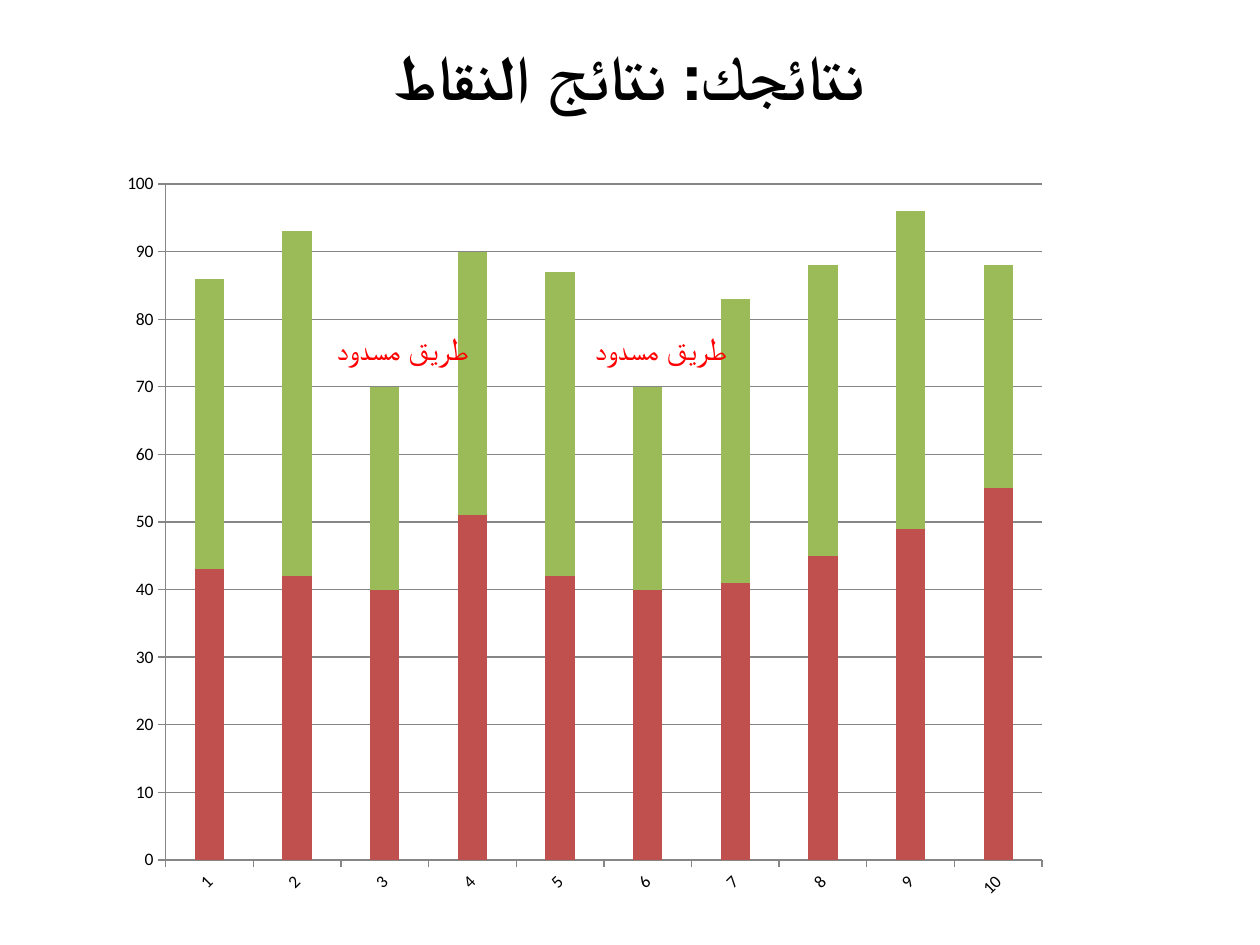
import pptx
import pptx.chart.data
import pptx.dml.color
import pptx.enum.chart
import pptx.enum.text
import pptx.oxml
import pptx.oxml.ns
import pptx.util

Inches = pptx.util.Inches
Pt = pptx.util.Pt


def set_color(color_format, hex_color):
    color_format.rgb = pptx.dml.color.RGBColor.from_string(hex_color)


def write_arabic(shape, text, alignment, font_format, hex_color):
    paragraph = shape.text_frame.paragraphs[0]
    paragraph.alignment = alignment
    paragraph._p.get_or_add_pPr().set("rtl", "1")
    run = paragraph.add_run()
    run.text = text
    for name, value in font_format.items():
        setattr(run.font, name, value)
    set_color(run.font.color, hex_color)


presentation = pptx.Presentation()
presentation.slide_width = Inches(10)
presentation.slide_height = Inches(7.5)
slide = presentation.slides.add_slide(presentation.slide_layouts[5])

title = slide.shapes.title
title_place = {"left": 0, "top": -0.03, "width": 10, "height": 1.25}
for name, value in title_place.items():
    setattr(title, name, Inches(value))
title.text_frame.vertical_anchor = pptx.enum.text.MSO_ANCHOR.MIDDLE
write_arabic(
    title,
    "نتائجك: نتائج النقاط",
    pptx.enum.text.PP_ALIGN.CENTER,
    {"size": Pt(36), "name": "Calibri", "bold": True},
    "000000",
)

chart_data = pptx.chart.data.CategoryChartData()
chart_data.categories = [str(number) for number in range(1, 11)]
chart_data.add_series("Series 1", [43, 42, 40, 51, 42, 40, 41, 45, 49, 55])
chart_data.add_series("Series 2", [43, 51, 30, 39, 45, 30, 42, 43, 47, 33])
chart = slide.shapes.add_chart(
    pptx.enum.chart.XL_CHART_TYPE.COLUMN_STACKED,
    Inches(0.2), Inches(0.92), Inches(10.23), Inches(6.44),
    chart_data,
).chart
chart.has_legend = False
chart.has_title = False
chart.font.size = Pt(10)
chart.font.name = "Calibri"
set_color(chart.font.color, "000000")

plot = chart.plots[0]
plot_format = {"gap_width": 199, "overlap": 100, "vary_by_categories": False}
for name, value in plot_format.items():
    setattr(plot, name, value)
for series, hex_color in zip(plot.series, ["C0504D", "9BBB59"]):
    series.format.fill.solid()
    set_color(series.format.fill.fore_color, hex_color)

value_axis = chart.value_axis
value_format = {
    "minimum_scale": 0,
    "maximum_scale": 100,
    "major_unit": 10,
    "has_major_gridlines": True,
}
for name, value in value_format.items():
    setattr(value_axis, name, value)
for axis in (chart.category_axis, value_axis):
    axis.major_tick_mark = pptx.enum.chart.XL_TICK_MARK.OUTSIDE
    axis.tick_labels.font.size = Pt(10)
    axis.tick_labels.font.name = "Calibri"
    set_color(axis.tick_labels.font.color, "000000")
for line in (
    chart.category_axis.format.line,
    value_axis.format.line,
    value_axis.major_gridlines.format.line,
):
    line.width = Pt(0.75)
    set_color(line.color, "868686")

qn = pptx.oxml.ns.qn
label_body = chart.category_axis._element.find(qn("c:txPr")).find(qn("a:bodyPr"))
label_body.set("rot", "-2700000")
label_body.set("vert", "horz")

plot_area = chart._chartSpace.chart.plotArea
for old_layout in plot_area.findall(qn("c:layout")):
    plot_area.remove(old_layout)
layout_values = {
    "layoutTarget": "inner",
    "xMode": "edge",
    "yMode": "edge",
    "x": 0.109,
    "y": 0.084,
    "w": 0.68,
    "h": 0.833,
}
layout_items = "".join(f'<c:{name} val="{value}"/>' for name, value in layout_values.items())
plot_area.insert(0, pptx.oxml.parse_xml(
    f'<c:layout {pptx.oxml.ns.nsdecls("c")}><c:manualLayout>{layout_items}</c:manualLayout></c:layout>'
))

for left in (2.56, 4.61):
    label = slide.shapes.add_textbox(Inches(left), Inches(2.56), Inches(1.26), Inches(0.4))
    label.text_frame.word_wrap = True
    label.text_frame.auto_size = pptx.enum.text.MSO_AUTO_SIZE.SHAPE_TO_FIT_TEXT
    write_arabic(
        label,
        "طريق مسدود",
        pptx.enum.text.PP_ALIGN.RIGHT,
        {"size": Pt(18), "name": "Calibri"},
        "FF0000",
    )

presentation.save("out.pptx")
